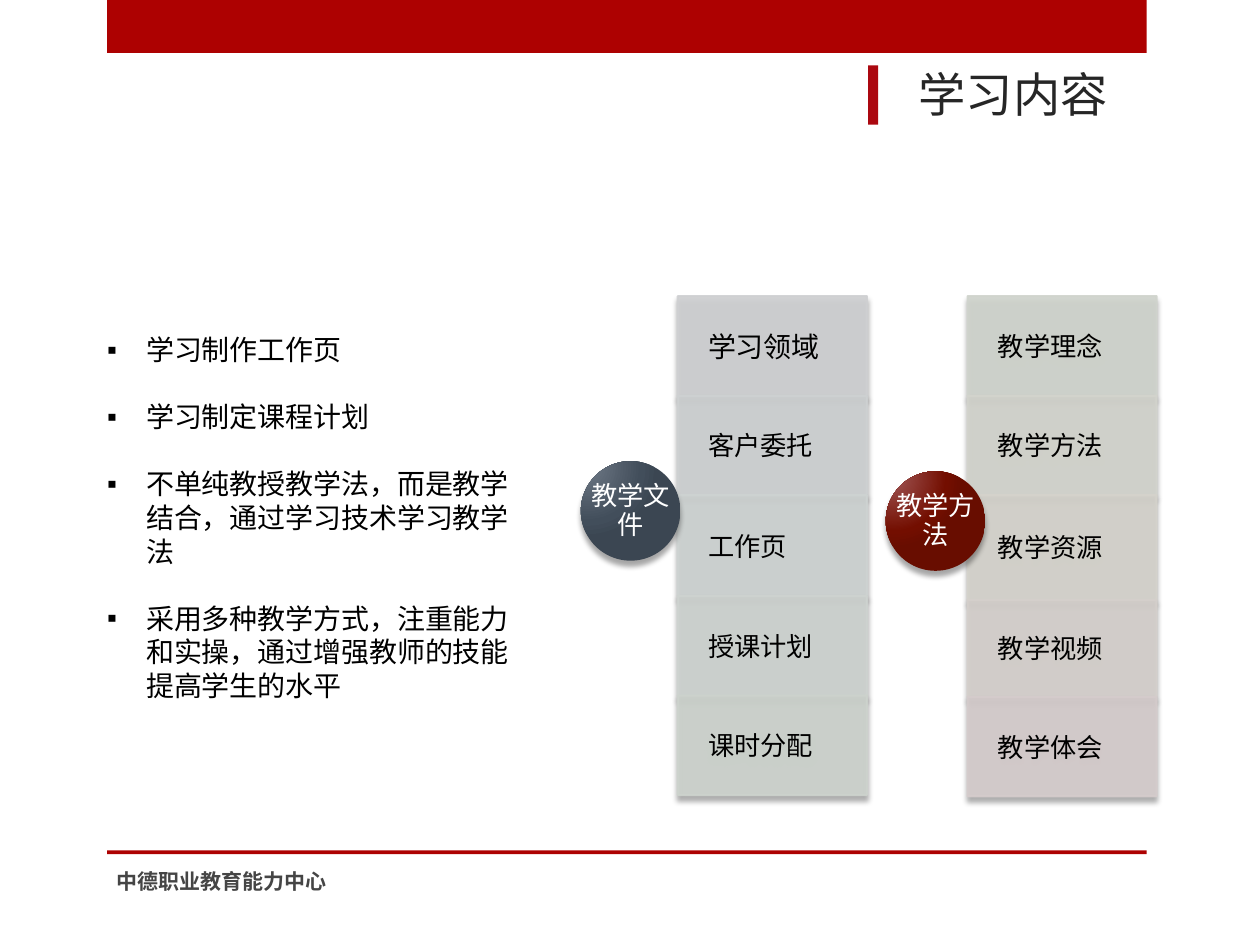
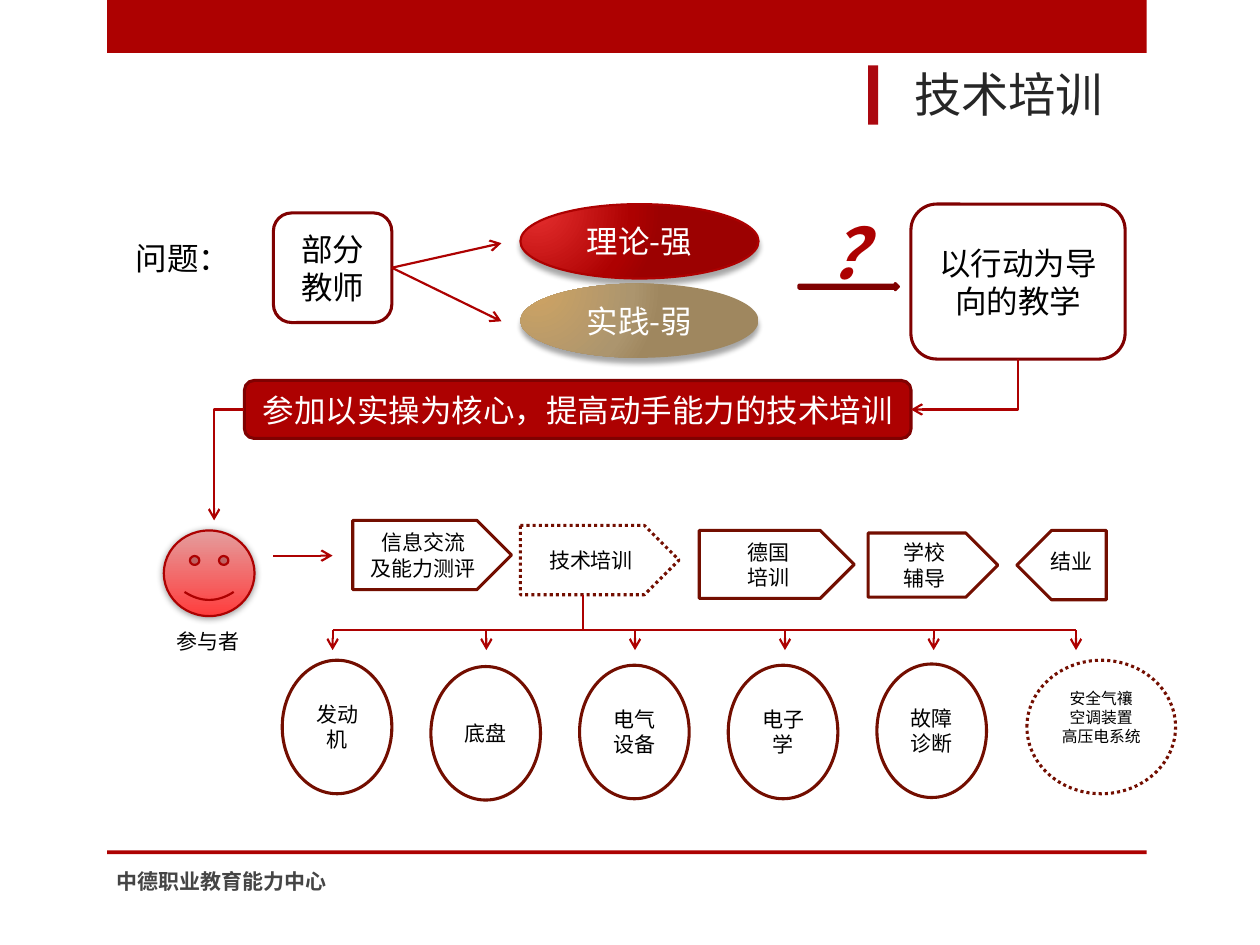
"""Builds two training slides: learning content and the technical training path."""
from itertools import accumulate

from pptx import Presentation
from pptx.dml.color import RGBColor
from pptx.enum.dml import MSO_LINE
from pptx.enum.shapes import MSO_CONNECTOR, MSO_SHAPE
from pptx.enum.text import MSO_ANCHOR, MSO_AUTO_SIZE, PP_ALIGN
from pptx.oxml import parse_xml
from pptx.oxml.ns import nsdecls, qn
from pptx.util import Inches, Pt

RECT, ROUND, OVAL = MSO_SHAPE.RECTANGLE, MSO_SHAPE.ROUNDED_RECTANGLE, MSO_SHAPE.OVAL
PENTAGON, ARROW, SMILEY = MSO_SHAPE.PENTAGON, MSO_SHAPE.RIGHT_ARROW, MSO_SHAPE.SMILEY_FACE
STRAIGHT, ELBOW = MSO_CONNECTOR.STRAIGHT, MSO_CONNECTOR.ELBOW
DOTTED = MSO_LINE.ROUND_DOT
LEFT, CENTER = PP_ALIGN.LEFT, PP_ALIGN.CENTER
TOP, MIDDLE = MSO_ANCHOR.TOP, MSO_ANCHOR.MIDDLE
NO_FIT = MSO_AUTO_SIZE.NONE

FONT, SERIF = "Noto Sans CJK SC", "Times New Roman"
BLACK, WHITE = RGBColor(0, 0, 0), RGBColor(255, 255, 255)
RED = RGBColor(0xAD, 0x01, 0x01)
DARK_RED = RGBColor(0x80, 0x01, 0x01)
BROWN = RGBColor(0x73, 0x0E, 0x00)
MARK_RED = RGBColor(0xAB, 0x08, 0x10)
TITLE_GRAY = RGBColor(0x26, 0x26, 0x26)
FOOTER_GRAY = RGBColor(0x45, 0x45, 0x45)
SLATE_GLOW = [(0, "6D7784"), (76, "424E5B"), (100, "3B4652")]
BROWN_GLOW = [(0, "9F5554"), (76, "730E00"), (100, "680D00")]
RED_GLOW = [(0, "E62F2F"), (76, "AD0101"), (100, "9C0101")]
GOLD_GLOW = [(0, "CEA363"), (76, "AC956E"), (100, "9F875F")]
FACE_GLOW = [(0, "E49D9D"), (100, "FF3D3D")]

FOOTER = "中德职业教育能力中心"
LINE_RATIO = 1.2
DEFAULT_INSET = (0.1, 0.05, 0.1, 0.05)
NO_INSET = (0, 0, 0, 0)

GOALS = [
    "学习制作工作页",
    "学习制定课程计划",
    "不单纯教授教学法，而是教学结合，通过学习技术学习教学法",
    "采用多种教学方式，注重能力和实操，通过增强教师的技能提高学生的水平",
]
CARD_TOP, CARD_WIDTH, DISC = 2.35, 1.5, 0.79
STACKS = [
    {"left": 5.38, "heights": [0.79, 0.79, 0.8, 0.79, 0.79],
     "disc": ("教学文件", 4.61, 3.66, SLATE_GLOW),
     "cards": [("学习领域", 16, "CFD0D2"), ("客户委托", 15, "CED1D2"), ("工作页", 15, "CED3D2"),
               ("授课计划", 15, "CED3D0"), ("课时分配", 15, "CDD3CD")]},
    {"left": 7.68, "heights": [0.79, 0.79, 0.83, 0.77, 0.79],
     "disc": ("教学方法", 7.03, 3.74, BROWN_GLOW),
     "cards": [("教学理念", 15, "D0D4CD"), ("教学方法", 15, "D3D4CD"), ("教学资源", 15, "D5D3CC"),
               ("教学视频", 15, "D5D0CC"), ("教学体会", 15, "D5CCCC")]},
]

STEPS = [
    (["信息交流", "及能力测评"], (2.8, 4.13, 1.26, 0.55), None),
    (["技术培训"], (4.13, 4.17, 1.26, 0.55), DOTTED),
    (["德国", "培训"], (5.55, 4.21, 1.23, 0.54), None),
    (["学校", "辅导"], (6.89, 4.23, 1.03, 0.51), None),
]
MODULES = [("发动机", 5.24), ("底盘", 5.29), ("电气设备", 5.28), ("电子学", 5.28), ("故障诊断", 5.27)]
MODULE_LEFT, MODULE_PITCH, MODULE_WIDTH, MODULE_HEIGHT = 2.24, 1.18, 0.87, 1.06
EXTRA_MODULES = ["安全气禳", "空调装置", "高压电系统"]
BUS_TOP, BUS_DROP = 5, 0.16
DROPS = [2.64, 3.86, 5.04, 6.23, 7.41, 8.54]


def write(shape, lines, size, color=BLACK, align=CENTER, anchor=MIDDLE, inset=DEFAULT_INSET,
          bold=False, italic=False, latin=FONT, wrap=True, ratio=LINE_RATIO, bullet=None, gap=0):
    frame = shape.text_frame
    frame.word_wrap = wrap
    frame.auto_size = NO_FIT
    frame.vertical_anchor = anchor
    (frame.margin_left, frame.margin_top,
     frame.margin_right, frame.margin_bottom) = [Inches(side) for side in inset]
    for index, line in enumerate(lines):
        para = frame.add_paragraph() if index else frame.paragraphs[0]
        if bullet:
            properties = para._p.get_or_add_pPr()
            properties.set("marL", str(Inches(0.31)))
            properties.set("indent", str(-Inches(0.31)))
            properties.append(parse_xml(f'<a:buChar {nsdecls("a")} char="{bullet}"/>'))
        para.alignment = align
        para.line_spacing = Pt(size * ratio)
        para.space_before = Pt(gap if index else 0)
        span = para.add_run()
        span.text = line
        font = span.font
        font.name, font.size, font.bold, font.italic = latin, Pt(size), bold, italic
        font.color.rgb = color
        font._element.find(qn("a:latin")).addnext(
            parse_xml(f'<a:ea {nsdecls("a")} typeface="{FONT}"/>'))


def place(shape, area):
    shape.left, shape.top, shape.width, shape.height = [Inches(length) for length in area]


def add_label(page, area, lines, size, **style):
    box = page.shapes.add_textbox(*[Inches(length) for length in area])
    write(box, lines, size, **style)
    return box


def add_figure(page, kind, area, fill=None, line=None, width=1.75, dash=None):
    shape = page.shapes.add_shape(kind, *[Inches(length) for length in area])
    shape.shadow.inherit = False
    if fill is None:
        shape.fill.background()
    else:
        shape.fill.solid()
        shape.fill.fore_color.rgb = fill
    if line is None:
        shape.line.fill.background()
    else:
        shape.line.color.rgb = line
        shape.line.width = Pt(width)
        if dash:
            shape.line.dash_style = dash
    return shape


def add_shadow(shape, opacity=35, blur=3, distance=3, angle=90):
    shape._element.spPr.find(qn("a:effectLst")).append(parse_xml(
        f'<a:outerShdw {nsdecls("a")} blurRad="{Pt(blur)}" dist="{Pt(distance)}" '
        f'dir="{angle * 60000}" rotWithShape="0"><a:srgbClr val="000000">'
        f'<a:alpha val="{opacity * 1000}"/></a:srgbClr></a:outerShdw>'))


def add_glow(shape, stops, radial=True):
    marks = "".join(f'<a:gs pos="{at * 1000}"><a:srgbClr val="{color}"/></a:gs>'
                    for at, color in stops)
    course = ('<a:path path="circle"><a:fillToRect l="15000" t="15000" r="100000" b="100000"/>'
              '</a:path>' if radial else '<a:lin ang="5400000" scaled="0"/>')
    properties = shape._element.spPr
    properties.replace(properties.find(qn("a:noFill")), parse_xml(
        f'<a:gradFill {nsdecls("a")} rotWithShape="1"><a:gsLst>{marks}</a:gsLst>{course}</a:gradFill>'))


def make_translucent(shape, opacity=90):
    for color in shape._element.spPr.iter(qn("a:srgbClr")):
        color.append(parse_xml(f'<a:alpha {nsdecls("a")} val="{opacity * 1000}"/>'))


def add_link(page, start, end, arrow=True, kind=STRAIGHT):
    link = page.shapes.add_connector(kind, *[Inches(length) for length in start + end])
    link.line.color.rgb = RED
    link.line.width = Pt(1.25)
    properties = link._element.spPr
    if arrow:
        properties.find(qn("a:ln")).append(parse_xml(f'<a:tailEnd {nsdecls("a")} type="arrow"/>'))
    properties.append(parse_xml(f'<a:effectLst {nsdecls("a")}/>'))
    return link


def make_corner(link, vertical_first=False):
    properties = link._element.spPr
    properties.find(qn("a:prstGeom")).set("prst", "bentConnector2")
    if vertical_first:
        across, down = link.width, link.height
        link.left += (across - down) // 2
        link.top += (down - across) // 2
        link.width, link.height = down, across
        frame = properties.find(qn("a:xfrm"))
        frame.attrib.pop("flipH", None)
        frame.set("rot", str(90 * 60000))


def add_page(deck, layout, title, title_area, footer_font):
    page = deck.slides.add_slide(deck.slide_layouts[layout])
    for area in [(0.85, 0, 8.25, 0.42), (0.85, 6.75, 8.25, 0.03)]:
        add_figure(page, RECT, area, RED)
    add_figure(page, RECT, (6.89, 0.52, 0.08, 0.47), MARK_RED)
    place(page.shapes.title, title_area)
    write(page.shapes.title, [title], 27, TITLE_GRAY)
    add_label(page, (0.83, 6.79, 5.33, 0.4), [FOOTER], 12, color=FOOTER_GRAY, align=LEFT,
              bold=True, latin=footer_font)
    return page


def add_stack(page, stack):
    tops = accumulate(stack["heights"], initial=CARD_TOP)
    for (text, size, tint), top, height in zip(stack["cards"], tops, stack["heights"]):
        color = RGBColor.from_string(tint)
        card = add_figure(page, RECT, (stack["left"], top, CARD_WIDTH, height), color, color, 1.25)
        make_translucent(card)
        add_shadow(card)
        write(card, [text], size, align=LEFT, inset=(0.24, 0.12, 0.12, 0.12))
    text, left, top, glow = stack["disc"]
    area = (left, top, DISC, DISC)
    disc = add_figure(page, OVAL, area)
    add_glow(disc, glow)
    add_shadow(disc)
    add_label(page, area, [text], 15, color=WHITE, inset=NO_INSET, ratio=1.1)


def build_content(deck):
    page = add_page(deck, 1, "学习内容", (6.81, 0.38, 2.46, 0.72), SERIF)
    goals = page.placeholders[1]
    place(goals, (0.75, 2.59, 3.54, 3.19))
    write(goals, GOALS, 16, align=LEFT, anchor=TOP, bullet="▪", gap=16 * LINE_RATIO)
    for stack in STACKS:
        add_stack(page, stack)


def add_problem(page):
    add_label(page, (0.98, 1.85, 0.96, 0.4), ["问题："], 18, align=LEFT, wrap=False)
    teachers = add_figure(page, ROUND, (2.17, 1.69, 0.94, 0.87), line=DARK_RED)
    write(teachers, ["部分教师"], 18)
    for text, top, glow, line, tip in [("理论-强", 1.62, RED_GLOW, RED, 1.93),
                                       ("实践-弱", 2.25, GOLD_GLOW, None, 2.55)]:
        skill = add_figure(page, OVAL, (4.13, top, 1.89, 0.59), line=line, width=1.25)
        add_glow(skill, glow)
        add_shadow(skill)
        write(skill, [text], 18, WHITE)
        add_link(page, (3.11, 2.13), (3.98, tip)).begin_connect(teachers, 3)
    add_figure(page, ARROW, (6.34, 2.25, 0.79, 0.05), RED, DARK_RED)
    add_label(page, (6.48, 1.61, 0.9, 0.77), ["？"], 40, color=RED, align=LEFT,
              bold=True, italic=True, wrap=False)
    target = add_figure(page, ROUND, (7.23, 1.62, 1.7, 1.23), line=DARK_RED)
    write(target, ["以行动为导向的教学"], 18)
    answer = add_figure(page, ROUND, (1.94, 3.02, 5.29, 0.46), RED, DARK_RED)
    write(answer, ["参加以实操为核心，提高动手能力的技术培训"], 18, WHITE, inset=(0.05, 0.05, 0.05, 0.05))
    back = add_link(page, (8.08, 2.85), (7.23, 3.25), kind=ELBOW)
    back.begin_connect(target, 2)
    back.end_connect(answer, 3)
    make_corner(back, vertical_first=True)
    down = add_link(page, (1.94, 3.25), (1.7, 4.13), kind=ELBOW)
    down.begin_connect(answer, 1)
    make_corner(down)


def add_path(page):
    face = add_figure(page, SMILEY, (1.3, 4.21, 0.72, 0.68), line=RED, width=1.25)
    add_glow(face, FACE_GLOW, radial=False)
    add_shadow(face, 40, 4, 1, 88)
    add_label(page, (1.3, 4.94, 0.89, 0.3), ["参与者"], 12, align=LEFT)
    add_link(page, (2.17, 4.41), (2.64, 4.41))
    for lines, area, dash in STEPS:
        write(add_figure(page, PENTAGON, area, line=BROWN, dash=dash), lines, 12)
    add_figure(page, PENTAGON, (8.07, 4.21, 0.71, 0.55), line=BROWN).rotation = 180
    add_label(page, (8.24, 4.3, 0.54, 0.3), ["结业"], 12, align=LEFT, wrap=False)


def add_modules(page):
    for column, (text, top) in enumerate(MODULES):
        left = MODULE_LEFT + column * MODULE_PITCH
        oval = add_figure(page, OVAL, (left, top, MODULE_WIDTH, MODULE_HEIGHT), line=BROWN)
        write(oval, [text], 12)
    extra = add_figure(page, OVAL, (8.15, 5.24, 1.18, MODULE_HEIGHT), line=BROWN, dash=DOTTED)
    write(extra, EXTRA_MODULES, 9, inset=(0.05, 0.05, 0.05, 0.2))
    add_link(page, (DROPS[0], BUS_TOP), (DROPS[-1], BUS_TOP), arrow=False)
    add_link(page, (4.63, 4.72), (4.63, BUS_TOP), arrow=False)
    for x in DROPS:
        add_link(page, (x, BUS_TOP), (x, BUS_TOP + BUS_DROP))


def main():
    deck = Presentation()
    deck.slide_width, deck.slide_height = Inches(10), Inches(7.5)
    build_content(deck)
    training = add_page(deck, 5, "技术培训", (6.45, 0.47, 3.11, 0.55), FONT)
    add_problem(training)
    add_path(training)
    add_modules(training)
    deck.save("out.pptx")


if __name__ == "__main__":
    main()
